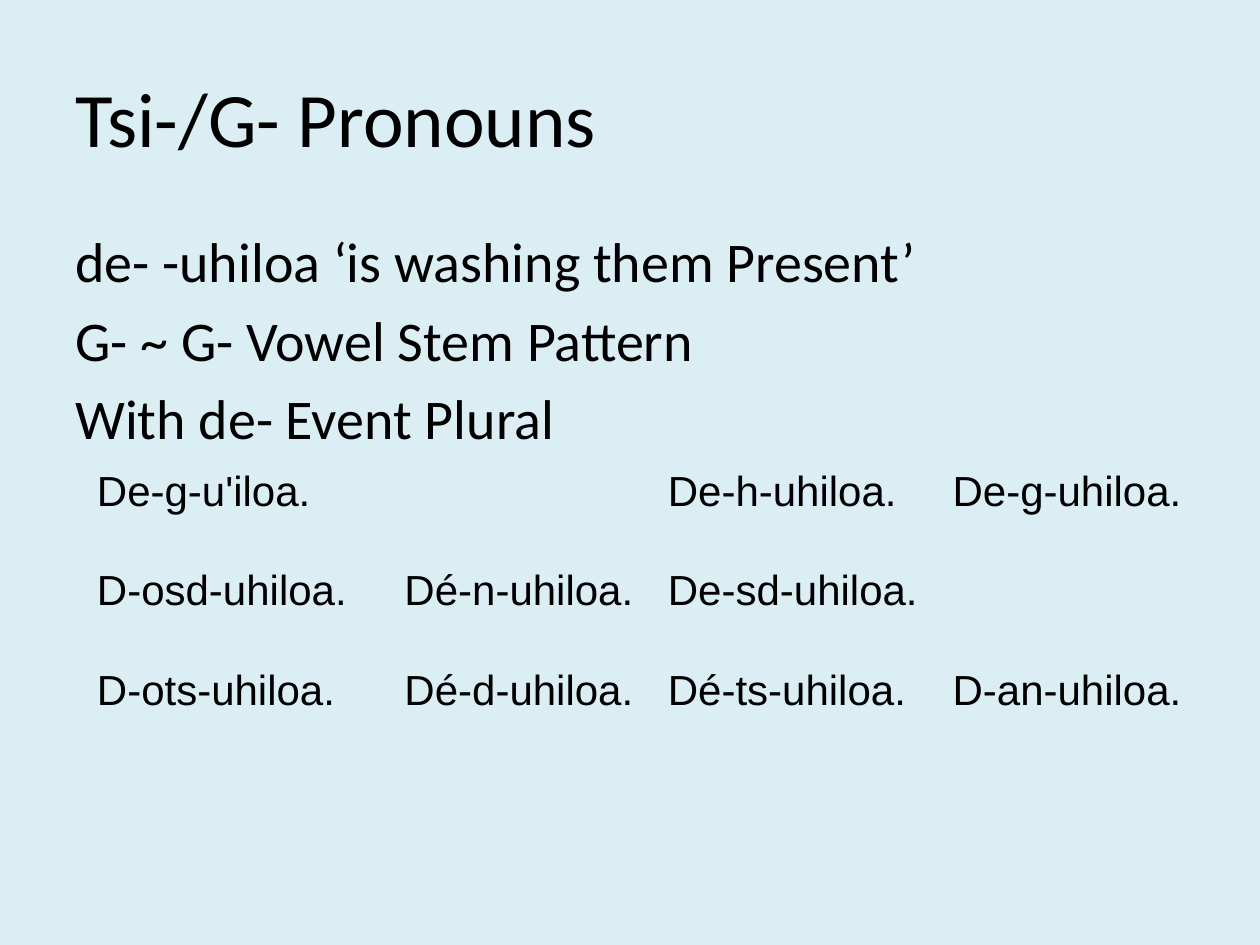
from dataclasses import dataclass

from pptx import Presentation
from pptx.dml.color import RGBColor
from pptx.enum.text import MSO_ANCHOR
from pptx.oxml.ns import qn
from pptx.util import Cm, Pt

TOP, MID = MSO_ANCHOR.TOP, MSO_ANCHOR.MIDDLE
PLAIN = "{2D5ABB26-0587-4C30-8999-92F81FD0307C}"


@dataclass(frozen=True)
class Theme:
    """Colours, fonts and type sizes of the slide."""
    back: RGBColor = RGBColor(0xDB, 0xEE, 0xF4)
    ink: RGBColor = RGBColor(0, 0, 0)
    text: str = "Calibri"
    grid: str = "Arial"
    head: Pt = Pt(44)
    body: Pt = Pt(32)
    cell: Pt = Pt(24)


THEME = Theme()
TITLE = "Tsi-/G- Pronouns"
NOTES = [
    "de- -uhiloa ‘is washing them Present’",
    "G- ~ G- Vowel Stem Pattern",
    "With de- Event Plural",
]
FORMS = [
    ["De-g-u'iloa.", "", "De-h-uhiloa.", "De-g-uhiloa."],
    ["D-osd-uhiloa.", "Dé-n-uhiloa.", "De-sd-uhiloa.", ""],
    ["D-ots-uhiloa.", "Dé-d-uhiloa.", "Dé-ts-uhiloa.", "D-an-uhiloa."],
]
WIDTHS = [6.2, 5.31, 5.74, 5.74]


def style(font, name, size):
    """Set the face, size and colour of a font."""
    for key, value in {"name": name, "size": size}.items():
        setattr(font, key, value)
    font.color.rgb = THEME.ink


def add_text(slide, box, lines, size, anchor, gap=0):
    """Place lines as paragraphs in a box, each after a gap."""
    frame = slide.shapes.add_textbox(*map(Cm, box)).text_frame
    for key, value in {"word_wrap": True, "vertical_anchor": anchor}.items():
        setattr(frame, key, value)
    frame.text = "\n".join(lines)
    for para in frame.paragraphs:
        para.space_before = Pt(gap)
        style(para.runs[0].font, THEME.text, size)


def add_forms(slide, box):
    """Place the verb forms as a table without fill or rules."""
    shape = slide.shapes.add_table(len(FORMS), len(WIDTHS), *map(Cm, box))
    table = shape.table
    for key in ("first_row", "horz_banding"):
        setattr(table, key, False)
    shape._element.find(".//" + qn("a:tableStyleId")).text = PLAIN
    for col, width in zip(table.columns, WIDTHS):
        col.width = Cm(width)
    for row, forms in zip(table.rows, FORMS):
        for cell, form in zip(row.cells, forms):
            cell.fill.background()
            para = cell.text_frame.paragraphs[0]
            style(para.font, THEME.grid, THEME.cell)
            if form:
                run = para.add_run()
                run.text = form
                style(run.font, THEME.grid, THEME.cell)


def main():
    """Build and save the slide."""
    deck = Presentation()
    deck.slide_width, deck.slide_height = Cm(25.4), Cm(19.05)
    slide = deck.slides.add_slide(deck.slide_layouts[6])
    fill = slide.background.fill
    fill.solid()
    fill.fore_color.rgb = THEME.back
    add_text(slide, (1.27, 0.76, 22.86, 3.18), [TITLE], THEME.head, MID)
    add_text(slide, (1.27, 4.45, 22.86, 12.57), NOTES, THEME.body, TOP, 6.4)
    add_forms(slide, (1.7, 9.32, sum(WIDTHS), 6))
    deck.save("out.pptx")


if __name__ == "__main__":
    main()
